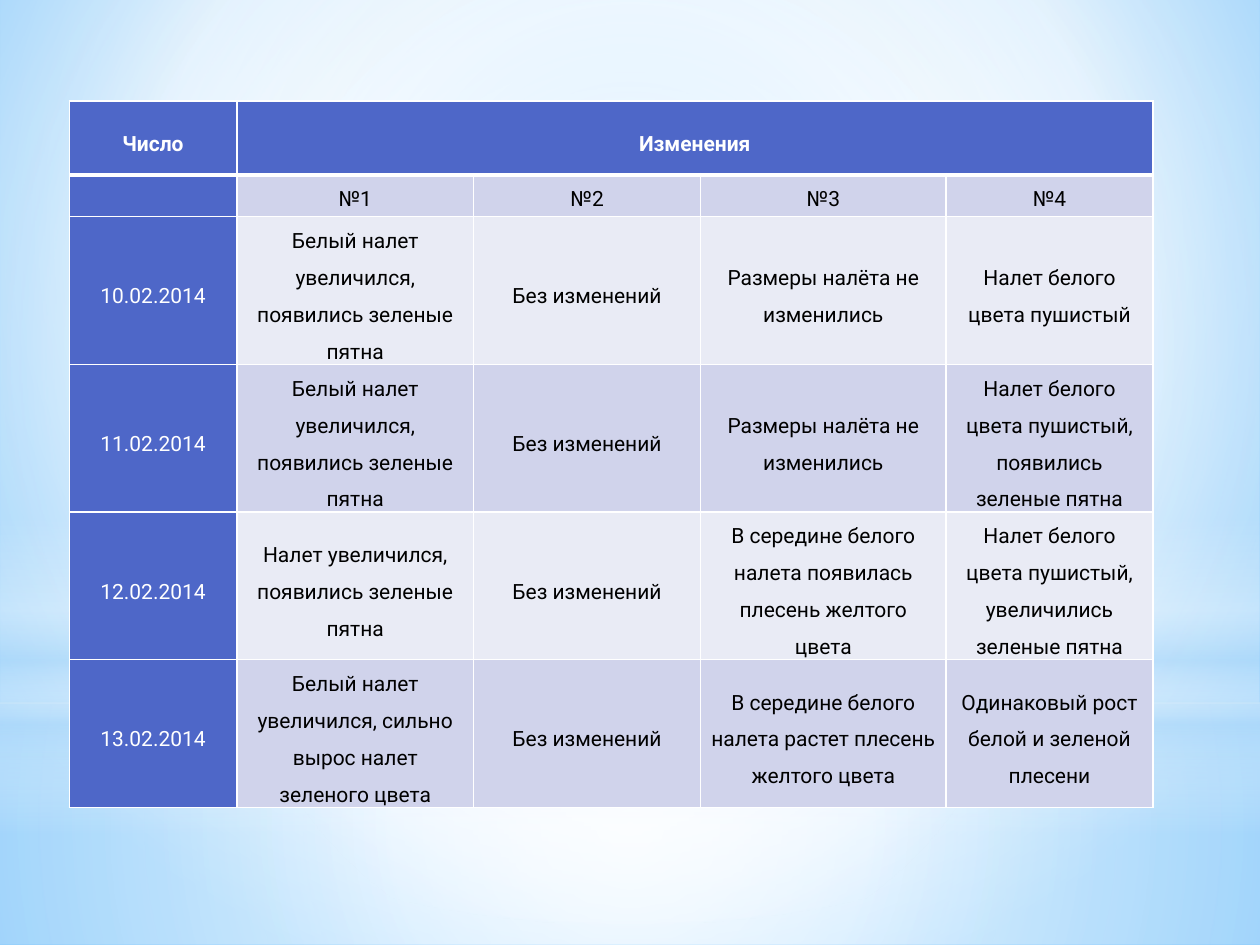
from lxml.etree import SubElement as Sub
from pptx import Presentation
from pptx.dml.color import RGBColor
from pptx.enum.shapes import MSO_SHAPE as Shape
from pptx.enum.text import MSO_ANCHOR as Anchor, PP_ALIGN as Align
from pptx.oxml.ns import qn
from pptx.util import Inches, Pt


def color(code):
    return RGBColor.from_string(code)


def paint(fill, stops, to=None):
    fill.gradient()
    grad = fill._xPr.find(qn("a:gradFill"))
    for child in list(grad):
        grad.remove(child)
    items = Sub(grad, qn("a:gsLst"))
    for spot, code, alpha in stops:
        stop = Sub(items, qn("a:gs"), pos=str(spot * 1000))
        tint = Sub(stop, qn("a:srgbClr"), val=code)
        if alpha < 100:
            Sub(tint, qn("a:alpha"), val=str(alpha * 1000))
    if to:
        round_path = Sub(grad, qn("a:path"), path="circle")
        sides = {side: str(part * 1000) for side, part in zip("ltrb", to)}
        Sub(round_path, qn("a:fillToRect"), **sides)
    else:
        Sub(grad, qn("a:lin"), ang="5400000", scaled="0")


WHITE, BLACK, SKY = "FFFFFF", "000000", "B4DCFA"
BLUE, LILAC, PALE = "4E67C8", "D0D3EB", "E9EBF5"
MID = (50, 50, 50, 50)

deck = Presentation()
deck.slide_width, deck.slide_height = Inches(10), Inches(7.5)
slide = deck.slides.add_slide(deck.slide_layouts[6])
paint(
    slide.background.fill,
    [(0, "9ED5FF", 100), (60, WHITE, 100), (100, "5BB9FF", 100)],
    (20, 10, 20, 60),
)

glows = [
    (Shape.RECTANGLE, 5.58, 1.92, MID,
     [(0, WHITE, 91), (37, WHITE, 76), (100, SKY, 79)]),
    (Shape.RECTANGLE, 0, 5.58, MID,
     [(0, WHITE, 89), (48, WHITE, 62), (100, SKY, 79)]),
    (Shape.RECTANGLE, 4.12, 2.5, None,
     [(0, WHITE, 0), (29, WHITE, 30), (45, SKY, 40),
      (55, WHITE, 26), (65, SKY, 60), (100, WHITE, 0)]),
    (Shape.OVAL, 1.75, 5.58, MID, [(0, WHITE, 100), (56, WHITE, 0)]),
]
for kind, top, height, to, stops in glows:
    glow = slide.shapes.add_shape(
        kind, 0, Inches(top), Inches(10), Inches(height))
    glow.shadow.inherit = False
    glow.line.fill.background()
    paint(glow.fill, stops, to)

same = "Без изменений"
grown = "Белый налет увеличился, появились зеленые пятна"
still = "Размеры налёта не изменились"
fluffy = "Налет белого цвета пушистый"
rows = [
    ["Число", "Изменения", "", "", ""],
    ["", "№1", "№2", "№3", "№4"],
    ["10.02.2014", grown, same, still, fluffy],
    ["11.02.2014", grown, same, still,
     fluffy + ",\nпоявились зеленые пятна"],
    ["12.02.2014", "Налет увеличился, появились зеленые пятна", same,
     "В середине белого налета появилась плесень желтого цвета",
     fluffy + ",\nувеличились зеленые пятна"],
    ["13.02.2014",
     "Белый налет увеличился, сильно вырос налет зеленого цвета", same,
     "В середине белого налета растет плесень желтого цвета",
     "Одинаковый рост белой и зеленой плесени"],
]
widths = [1.33, 1.88, 1.8, 1.95, 1.64]
heights = [0.59, 0.33] + [1.17] * 4

table = slide.shapes.add_table(
    len(rows), len(widths), Inches(0.55), Inches(0.8),
    Inches(sum(widths)), Inches(sum(heights))).table
table.first_row = table.horz_banding = False
for col, width in zip(table.columns, widths):
    col.width = Inches(width)
for row, height in zip(table.rows, heights):
    row.height = Inches(height)
table.cell(0, 1).merge(table.cell(0, 4))

inset = {
    "margin_left": Inches(0.07), "margin_right": Inches(0.07),
    "margin_top": 0, "margin_bottom": 0,
}
layout = {"alignment": Align.CENTER, "line_spacing": 1.5}
for y, words in enumerate(rows):
    for x, text in enumerate(words):
        cell = table.cell(y, x)
        dark = y == 0 or x == 0
        for name, value in inset.items():
            setattr(cell, name, value)
        cell.vertical_anchor = Anchor.TOP if y == 1 else Anchor.MIDDLE
        props = cell._tc.get_or_add_tcPr()
        for side in "LRTB":
            thick = (y, side) in [(0, "B"), (1, "T")]
            edge = Sub(props, qn("a:ln" + side), w=str(Pt(3 if thick else 1)))
            Sub(Sub(edge, qn("a:solidFill")), qn("a:srgbClr"), val=WHITE)
        cell.fill.solid()
        cell.fill.fore_color.rgb = color(
            BLUE if dark else LILAC if y % 2 else PALE)
        if text:
            cell.text = text
        face = {"size": Pt(12), "name": "Roboto", "bold": y == 0}
        for para in cell.text_frame.paragraphs:
            for name, value in layout.items():
                setattr(para, name, value)
            for run in para.runs:
                for name, value in face.items():
                    setattr(run.font, name, value)
                run.font.color.rgb = color(WHITE if dark else BLACK)
            if not para.runs:
                Sub(para._p, qn("a:endParaRPr"), sz="1200")

deck.save("out.pptx")
